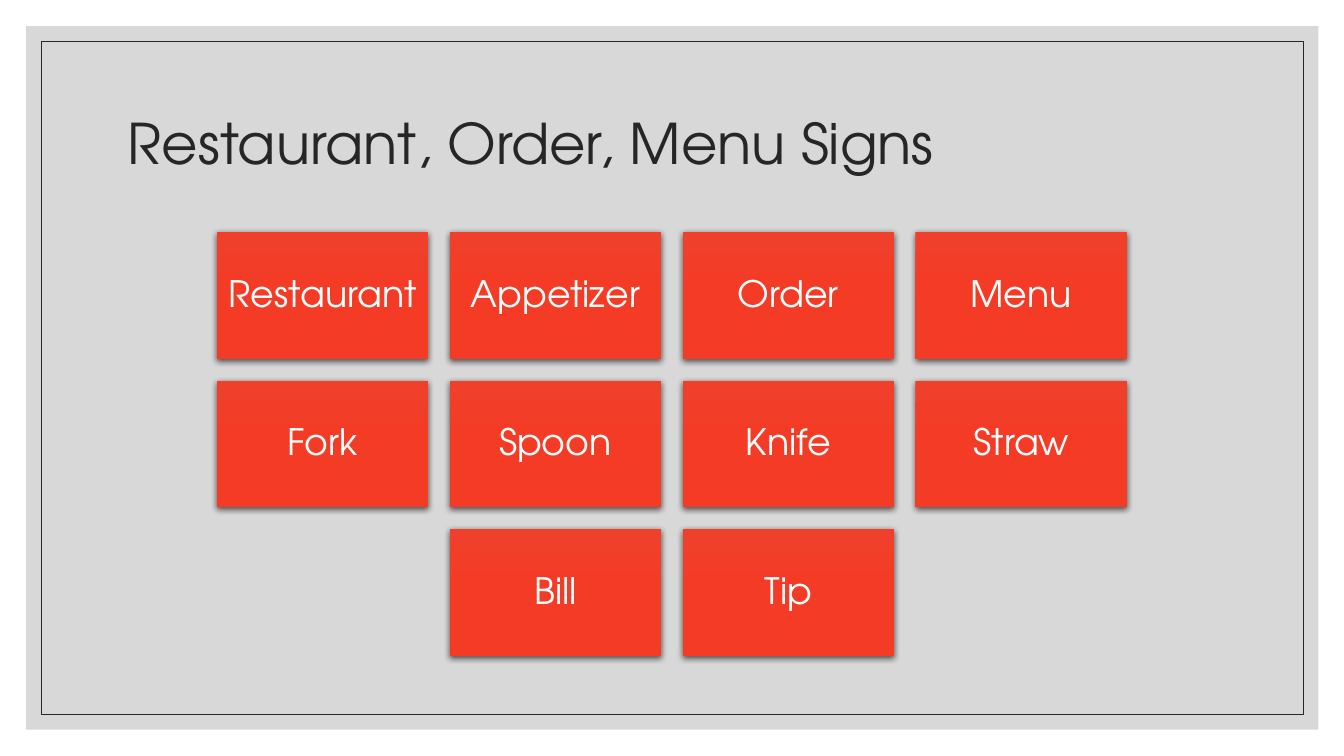
from dataclasses import dataclass

from lxml.etree import SubElement
from pptx import Presentation
from pptx.dml.color import RGBColor
from pptx.enum.shapes import MSO_SHAPE as Preset
from pptx.enum.text import MSO_ANCHOR as Anchor, PP_ALIGN as Align
from pptx.oxml.ns import qn
from pptx.util import Pt

FONT = "TeX Gyre Adventor"
INK = "262626"
PAGE_WIDTH, PAGE_HEIGHT = 960, 540
CARD_WIDTH, CARD_HEIGHT = 151.2, 90.72
GAP = 15.12
FIRST_ROW_TOP = 165.6
ROW_STEP = 106.2
CARD_STOPS = ((0, "F03F2B"), (50, "F43B26"), (100, "F33B26"))
SIGN_ROWS = (
    ("Restaurant", "Appetizer", "Order", "Menu"),
    ("Fork", "Spoon", "Knife", "Straw"),
    ("Bill", "Tip"),
)


@dataclass(frozen=True)
class Area:
    left: float
    top: float
    width: float
    height: float

    def lengths(self) -> tuple:
        return Pt(self.left), Pt(self.top), Pt(self.width), Pt(self.height)


@dataclass(frozen=True)
class Card:
    label: str
    area: Area


def color(value: str) -> RGBColor:
    return RGBColor.from_string(value)


def add_xml(parent, tag: str, **attributes):
    return SubElement(parent, qn(tag), {name: str(value) for name, value in attributes.items()})


def write_text(box, text: str, *, size: float, ink: str, align=Align.LEFT, inset=None) -> None:
    frame = box.text_frame
    frame.word_wrap = True
    frame.vertical_anchor = Anchor.MIDDLE
    if inset is not None:
        frame.margin_left = frame.margin_right = Pt(inset)
        frame.margin_top = frame.margin_bottom = Pt(inset)
    para = frame.paragraphs[0]
    para.alignment = align
    para.line_spacing = 0.9
    span = para.add_run()
    span.text = text
    span.font.name = FONT
    span.font.size = Pt(size)
    span.font.color.rgb = color(ink)


def add_rectangle(page, area: Area):
    """Add a rectangle with no shadow, fill or line."""
    box = page.shapes.add_shape(Preset.RECTANGLE, *area.lengths())
    box.shadow.inherit = False
    box.fill.background()
    box.line.fill.background()
    return box


def add_frame(page) -> None:
    """Add the translucent grey panel and the thin border inside it."""
    panel = add_rectangle(page, Area(18.72, 18.72, 923.04, 502.56))
    panel.fill.solid()
    panel.fill.fore_color.rgb = color("BFBFBF")
    tint = panel.element.spPr.find(qn("a:solidFill")).find(qn("a:srgbClr"))
    add_xml(tint, "a:alpha", val=60000)

    border = add_rectangle(page, Area(29.52, 29.52, 901.44, 480.96))
    border.line.color.rgb = color(INK)
    border.line.width = Pt(0.5)


def add_card(page, card: Card) -> None:
    box = add_rectangle(page, card.area)
    box.fill.gradient()
    box.fill.gradient_angle = 270
    properties = box.element.spPr
    stops = properties.find(qn("a:gradFill")).find(qn("a:gsLst"))
    stops.clear()
    for percent, value in CARD_STOPS:
        stop = add_xml(stops, "a:gs", pos=percent * 1000)
        add_xml(stop, "a:srgbClr", val=value)

    effects = properties.find(qn("a:effectLst"))
    shadow = add_xml(effects, "a:outerShdw", blurRad=Pt(4.5), dist=Pt(1.5),
                     dir=5400000, algn="ctr", rotWithShape=0)
    add_xml(add_xml(shadow, "a:srgbClr", val="000000"), "a:alpha", val=63000)
    write_text(box, card.label, size=26, ink="FFFFFF", align=Align.CENTER, inset=7.8)


def sign_cards() -> list[Card]:
    """Lay out each row of signs centred on the page."""
    cards = []
    for row, labels in enumerate(SIGN_ROWS):
        row_width = len(labels) * (CARD_WIDTH + GAP) - GAP
        left = (PAGE_WIDTH - row_width) / 2
        top = FIRST_ROW_TOP + row * ROW_STEP
        for column, label in enumerate(labels):
            area = Area(left + column * (CARD_WIDTH + GAP), top, CARD_WIDTH, CARD_HEIGHT)
            cards.append(Card(label, area))
    return cards


def main() -> None:
    deck = Presentation()
    deck.slide_width, deck.slide_height = Pt(PAGE_WIDTH), Pt(PAGE_HEIGHT)
    page = deck.slides.add_slide(deck.slide_layouts[6])
    add_frame(page)
    title = page.shapes.add_textbox(*Area(84.24, 50.4, 792, 108).lengths())
    write_text(title, "Restaurant, Order, Menu Signs", size=40, ink=INK)
    for card in sign_cards():
        add_card(page, card)
    deck.save("out.pptx")


if __name__ == "__main__":
    main()
